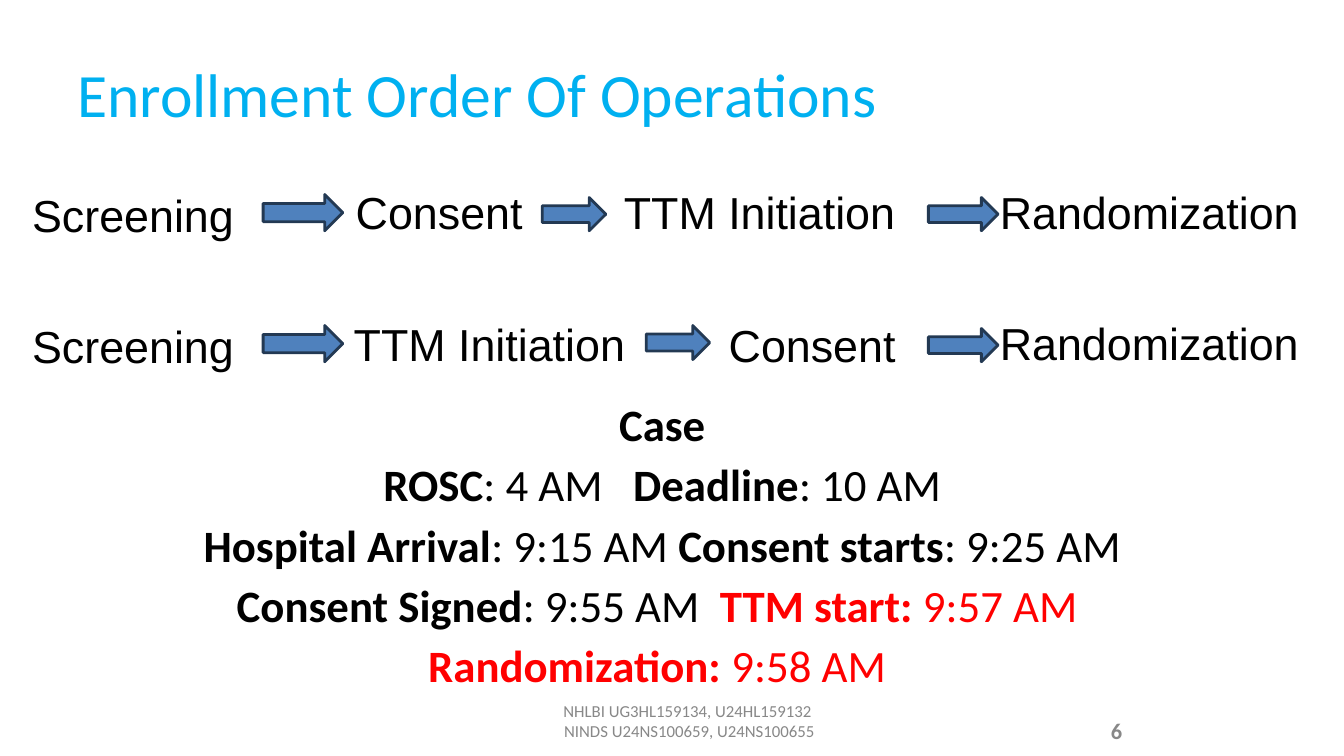
"""Builds the enrollment order slide."""
from pptx import Presentation
from pptx.dml.color import RGBColor
from pptx.enum.shapes import MSO_SHAPE as Preset
from pptx.enum.text import MSO_ANCHOR as Anchor, PP_ALIGN as Align
from pptx.util import Inches, Pt

BLACK = RGBColor(0x00, 0x00, 0x00)
CYAN = RGBColor(0x00, 0xB0, 0xF0)
GRAY = RGBColor(0x88, 0x88, 0x88)
RED = RGBColor(0xFF, 0x00, 0x00)
BLUE = RGBColor(0x4F, 0x81, 0xBD)
NAVY = RGBColor(0x23, 0x39, 0x53)

SPACE_EM = 0.226
ROW_STEP = 17.33
STEP_HEIGHT = 8.53

FLOWS = [
    {
        "steps": [("Screening", 1.65, 24.13, 16.65), ("Consent", 25.73, 23.73, 14.03),
                  ("TTM Initiation", 45.68, 23.73, 21.9), ("Randomization", 73.65, 23.73, 23.93)],
        "arrows": [(19.58, 25.73, 5.93, 4.8), (40.35, 26.13, 4.73, 4.4), (69.08, 26.13, 5.18, 4.4)],
    },
    {
        "steps": [("Screening", 1.65, 24.13, 16.65), ("TTM Initiation", 25.58, 23.87, 21.9),
                  ("Consent", 53.48, 24, 14.03), ("Randomization", 73.65, 23.73, 23.93)],
        "arrows": [(19.58, 25.73, 5.93, 4.8), (48.08, 25.73, 4.73, 4.5), (69.08, 26.13, 5.18, 4.4)],
    },
]

BOLD = {"bold": True}
RED_BOLD = {"bold": True, "color": RED}
RED_PLAIN = {"color": RED}
CASE = [
    [("Case", BOLD)],
    [("ROSC", BOLD), (": 4 AM", {}), (" ", {"gap": 3}), ("Deadline", BOLD), (": 10 AM", {})],
    [("Hospital Arrival", BOLD), (": 9:15 AM ", {}), ("Consent starts", BOLD), (": 9:25 AM", {})],
    [("Consent Signed", BOLD), (": 9:55 AM", {}), (" ", {"gap": 2}),
     ("TTM start: ", RED_BOLD), ("9:57 AM ", RED_PLAIN)],
    [("Randomization: ", RED_BOLD), ("9:58 AM", RED_PLAIN), (" ", {"gap": 2})],
]
FOOTER = [
    [("NHLBI UG3HL159134, U24HL159132", {}), (" ", {"gap": 3})],
    [("NINDS U24NS100659, U24NS100655", {})],
]


def add_run(paragraph, text, font="Calibri", size=32, color=BLACK, bold=False, gap=1):
    run = paragraph.add_run()
    run.text = text
    run.font.name = font
    run.font.size = Pt(size)
    run.font.color.rgb = color
    run.font.bold = bold
    if gap > 1:
        run.font._element.set("spc", str(round((gap - 1) * SPACE_EM * size * 100)))


class SlideBuilder:
    def __init__(self, presentation):
        self.column = presentation.slide_width / 100
        self.row = presentation.slide_height / 100
        self.slide = presentation.slides.add_slide(presentation.slide_layouts[6])

    def place(self, left, top, width, height):
        return (round(left * self.column), round(top * self.row),
                round(width * self.column), round(height * self.row))

    def text(self, box, lines, align=Align.LEFT, anchor=Anchor.TOP, wrap=True,
             inset=0.05, space=0, **style):
        frame = self.slide.shapes.add_textbox(*self.place(*box)).text_frame
        frame.word_wrap = wrap
        frame.vertical_anchor = anchor
        frame.margin_top = frame.margin_bottom = Inches(inset)
        for index, line in enumerate(lines):
            paragraph = frame.add_paragraph() if index else frame.paragraphs[0]
            paragraph.alignment = align
            if index and space:
                paragraph.space_before = Pt(space)
            for text, changes in line:
                add_run(paragraph, text, **{**style, **changes})

    def arrow(self, box):
        shape = self.slide.shapes.add_shape(Preset.RIGHT_ARROW, *self.place(*box))
        shape.shadow.inherit = False
        shape.fill.solid()
        shape.fill.fore_color.rgb = BLUE
        shape.line.color.rgb = NAVY
        shape.line.width = Pt(2)

    def flow(self, steps, arrows, offset):
        for text, left, top, width in steps:
            self.text((left, top + offset, width, STEP_HEIGHT), [[(text, {})]],
                      wrap=False, font="Arial")
        for left, top, width, height in arrows:
            self.arrow((left, top + offset, width, height))


def main():
    presentation = Presentation()
    presentation.slide_width = Inches(13.33)
    presentation.slide_height = Inches(7.5)
    builder = SlideBuilder(presentation)
    builder.text((39, 91.33, 24.6, 8.13), FOOTER, align=Align.CENTER,
                 anchor=Anchor.MIDDLE, inset=0.1, size=12, color=GRAY)
    builder.text((5, 4, 90, 16.67), [[("Enrollment Order Of Operations", {})]],
                 anchor=Anchor.MIDDLE, size=44, color=CYAN)
    builder.text((60.9, 94, 23.33, 5.33), [[("6", BOLD)]], align=Align.RIGHT,
                 anchor=Anchor.MIDDLE, size=16, color=GRAY)
    for index, flow in enumerate(FLOWS):
        builder.flow(**flow, offset=index * ROW_STEP)
    builder.text((1.65, 51.87, 95.25, 40), CASE, align=Align.CENTER, space=4.5)
    presentation.save("out.pptx")


if __name__ == "__main__":
    main()
